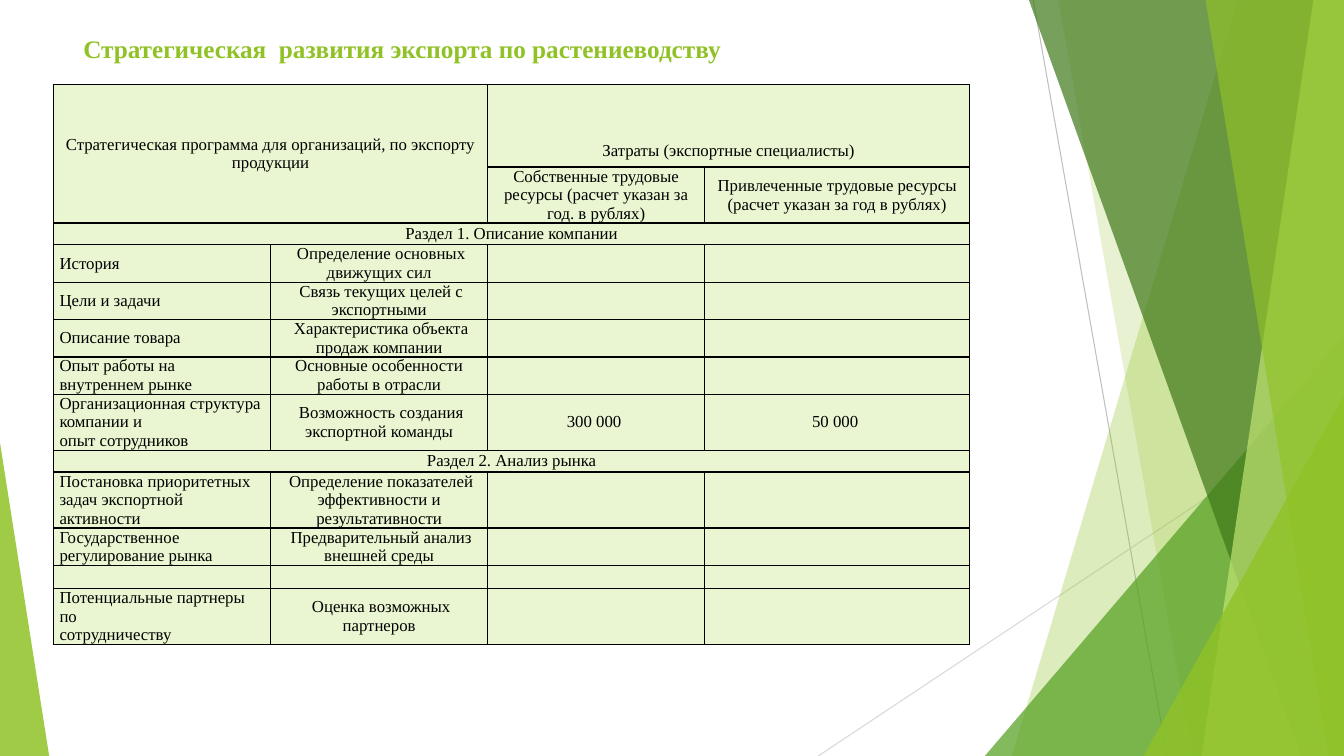
from lxml import etree
from pptx import Presentation
from pptx import util as u
from pptx.dml.color import RGBColor
from pptx.enum import shapes, text
from pptx.oxml import parse_xml
from pptx.oxml.ns import nsdecls, qn

HUES = {
    "lime": "90C226", "green": "54A021", "dark": "3F7819", "light": "C0E474",
    "cell": "EAF6D1", "ink": "000000", "grey": "BFBFBF", "pale": "D9D9D9",
}
FONT = "Times New Roman"
WIDE, HIGH = 33.87, 19.05


def tint(shape, hue, alpha):
    shape.shadow.inherit = False
    shape.line.fill.background()
    shape.fill.solid()
    shape.fill.fore_color.rgb = RGBColor.from_string(HUES[hue])
    node = shape.fill._xPr.find(qn("a:solidFill"))[0]
    etree.SubElement(node, qn("a:alpha")).set("val", str(alpha * 1000))


def write(para, words, size, hue, bold=False):
    run = para.add_run()
    run.text = words
    run.font.name = FONT
    run.font.size = u.Pt(size)
    run.font.bold = bold
    run.font.color.rgb = RGBColor.from_string(HUES[hue])


deck = Presentation()
deck.slide_width, deck.slide_height = u.Cm(WIDE), u.Cm(HIGH)
slide = deck.slides.add_slide(deck.slide_layouts[6])
draw = slide.shapes

for x1, y1, x2, y2, hue in [
    (26.04, 0, 29.41, HIGH, "grey"),
    (WIDE, 10.24, 20.62, HIGH, "pale"),
]:
    line = draw.add_connector(
        shapes.MSO_CONNECTOR.STRAIGHT, u.Cm(x1), u.Cm(y1), u.Cm(x2), u.Cm(y2))
    line.line.width = u.Pt(0.75)
    line.line.color.rgb = RGBColor.from_string(HUES[hue])
    etree.SubElement(line._element.spPr, qn("a:effectLst"))

FACETS = [
    ("band", (31.19, 25.5), "lime", 30),
    ("band", (26.67, 30.05), "lime", 20),
    ("peak", (24.82, 8.46, 9.05, 1), "green", 72),
    ("band", (25.93, 32.79), "dark", 70),
    ("band", (33.1, 30.28), "light", 70),
    ("band", (30.38, 33.48), "lime", 65),
    ("peak", (28.82, 9.98, 5.05, 1), "lime", 80),
    ("peak", (0, 11.15, 1.24, 0), "lime", 85),
]
for kind, dims, hue, alpha in FACETS:
    if kind == "band":
        top, base = dims
        pen = draw.build_freeform(u.Cm(top), 0)
        pen.add_line_segments([
            (u.Cm(WIDE), 0), (u.Cm(WIDE), u.Cm(HIGH)), (u.Cm(base), u.Cm(HIGH))])
        facet = pen.convert_to_shape()
    else:
        left, top, width, tip = dims
        facet = draw.add_shape(
            shapes.MSO_SHAPE.ISOSCELES_TRIANGLE,
            u.Cm(left), u.Cm(top), u.Cm(width), u.Cm(HIGH - top))
        facet.adjustments[0] = tip
    tint(facet, hue, alpha)

LINE = 0.47
ROWS = [
    (2.08, ["Стратегическая программа для организаций, по экспорту продукции", "",
            "Затраты (экспортные специалисты)"]),
    (3 * LINE, ["", "", "Собственные трудовые ресурсы (расчет указан за год. в рублях)",
                "Привлеченные трудовые ресурсы (расчет указан за год в рублях)"]),
    (0.55, ["Раздел 1. Описание компании"]),
    (2 * LINE, ["История", " Определение основных движущих сил"]),
    (2 * LINE, ["Цели и задачи", " Связь текущих целей с экспортными"]),
    (2 * LINE, ["Описание товара", " Характеристика объекта продаж компании"]),
    (2 * LINE, ["Опыт работы на\nвнутреннем рынке",
                "Основные особенности работы в отрасли"]),
    (3 * LINE, ["Организационная структура компании и\nопыт сотрудников",
                " Возможность создания экспортной команды", "300 000 ", "50 000 "]),
    (0.55, ["Раздел 2. Анализ рынка"]),
    (3 * LINE, ["Постановка приоритетных задач экспортной\nактивности",
                " Определение показателей эффективности и результативности"]),
    (2 * LINE, ["Государственное\nрегулирование рынка",
                " Предварительный анализ внешней среды"]),
    (0.58, []),
    (3 * LINE, ["Потенциальные партнеры по\nсотрудничеству",
                " Оценка возможных партнеров"]),
]
COLS = [5.47, 5.47, 5.47, 6.68]
HEADS = (0, 1, 2, 8)

frame = draw.add_table(
    len(ROWS), len(COLS), u.Cm(1.35), u.Cm(2.13),
    u.Cm(sum(COLS)), u.Cm(sum(tall for tall, cells in ROWS)))
grid = frame.table
grid.first_row = grid.horz_banding = False
for col, width in zip(grid.columns, COLS):
    col.width = u.Cm(width)

for r, (tall, cells) in enumerate(ROWS):
    grid.rows[r].height = u.Cm(tall)
    for c in range(len(COLS)):
        cell = grid.cell(r, c)
        cell.margin_left = cell.margin_right = u.Cm(0.15)
        cell.margin_top = cell.margin_bottom = 0
        cell.vertical_anchor = text.MSO_ANCHOR.MIDDLE
        props = cell._tc.get_or_add_tcPr()
        for side in "LRTB":
            props.append(parse_xml(
                f'<a:ln{side} {nsdecls("a")} w="12700"><a:solidFill>'
                f'<a:srgbClr val="{HUES["ink"]}"/></a:solidFill></a:ln{side}>'))
        cell.fill.solid()
        cell.fill.fore_color.rgb = RGBColor.from_string(HUES["cell"])
        words = cells[c] if c < len(cells) else ""
        body = cell.text_frame
        for i, part in enumerate(words.split("\n")):
            para = body.add_paragraph() if i else body.paragraphs[0]
            if c or r in HEADS:
                para.alignment = text.PP_ALIGN.CENTER
            if part:
                write(para, part, 12, "ink")
            else:
                para._p.get_or_add_endParaRPr().set("sz", "1200")

for r1, c1, r2, c2 in [(0, 0, 1, 1), (0, 2, 0, 3), (2, 0, 2, 3), (8, 0, 8, 3)]:
    grid.cell(r1, c1).merge(grid.cell(r2, c2))
cost = grid.cell(0, 2)
cost.vertical_anchor = text.MSO_ANCHOR.BOTTOM
cost.margin_bottom = u.Cm(0.18)

title = draw.add_textbox(u.Cm(1.85), u.Cm(0.72), u.Cm(20.45), u.Cm(1.14))
title.text_frame.word_wrap = True
write(title.text_frame.paragraphs[0],
      "Стратегическая  развития экспорта по растениеводству", 18, "lime", True)

deck.save("out.pptx")
